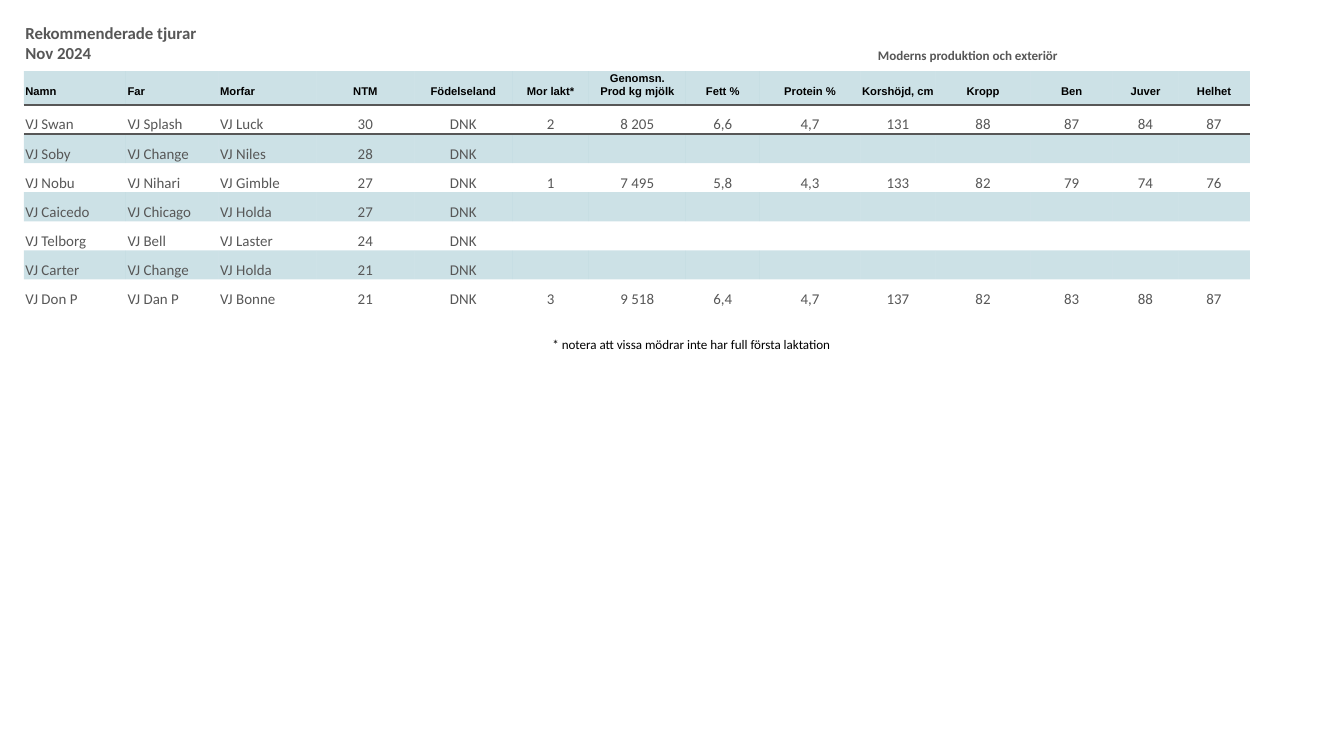
from dataclasses import dataclass

from lxml import etree
from pptx import Presentation
from pptx.dml.color import RGBColor
from pptx.enum.text import MSO_ANCHOR, PP_ALIGN
from pptx.oxml.ns import qn
from pptx.util import Cm, Pt

LEFT, MID = PP_ALIGN.LEFT, PP_ALIGN.CENTER
LOW = MSO_ANCHOR.BOTTOM

PLAIN = "{2D5ABB26-0587-4C30-8999-92F81FD0307C}"
WIDTHS = [1.93, 1.75, 1.85, 1.85, 1.85, 1.45, 1.83,
          1.4, 1.9, 1.42, 1.8, 1.55, 1.24, 1.35]
ROW = 0.55
HEADS = ["Namn", "Far", "Morfar", "NTM", "Födelseland", "Mor lakt*",
         "Genomsn.\vProd kg mjölk", "Fett %", "Protein %", "Korshöjd, cm",
         "Kropp", "Ben", "Juver", "Helhet"]
BULLS = [
    ["VJ Swan", "VJ Splash", "VJ Luck", "30", "DNK", "2", "8 205",
     "6,6", "4,7", "131", "88", "87", "84", "87"],
    ["VJ Soby", "VJ Change", "VJ Niles", "28", "DNK"],
    ["VJ Nobu", "VJ Nihari", "VJ Gimble", "27", "DNK", "1", "7 495",
     "5,8", "4,3", "133", "82", "79", "74", "76"],
    ["VJ Caicedo", "VJ Chicago", "VJ Holda", "27", "DNK"],
    ["VJ Telborg", "VJ Bell", "VJ Laster", "24", "DNK"],
    ["VJ Carter", "VJ Change", "VJ Holda", "21", "DNK"],
    ["VJ Don P", "VJ Dan P", "VJ Bonne", "21", "DNK", "3", "9 518",
     "6,4", "4,7", "137", "82", "83", "88", "87"],
]
TINTED = {1, 3, 5, 7}


@dataclass(frozen=True)
class Theme:
    grey: str = "575757"
    black: str = "000000"
    teal: str = "006B85"
    tint: int = 20
    rule: float = 1
    body: str = "Calibri"
    head: str = "Arial"
    title: float = 9
    group: float = 7
    label: float = 6
    data: float = 8
    note: float = 7


def put(item, values):
    for name, value in values.items():
        setattr(item, name, value)


class Page:
    """Hold the theme and the current slide, and draw tables on it."""

    def __init__(self, slide, theme):
        self.slide, self.theme = slide, theme

    def table(self, left, top, widths, heights):
        shape = self.slide.shapes.add_table(
            len(heights), len(widths), Cm(left), Cm(top),
            Cm(sum(widths)), Cm(sum(heights)))
        grid = shape.table
        put(grid, {"first_row": False, "horz_banding": False})
        grid._tbl.tblPr.find(qn("a:tableStyleId")).text = PLAIN
        for col, width in zip(grid.columns, widths):
            col.width = Cm(width)
        for row, height in zip(grid.rows, heights):
            row.height = Cm(height)
        return grid

    def cell(self, cell, text, size, font, color, bold=False, align=LEFT, foot=0.13):
        put(cell, {"vertical_anchor": LOW, "margin_left": Cm(0.03),
                   "margin_right": Cm(0.03), "margin_top": Cm(0.03),
                   "margin_bottom": Cm(foot)})
        cell.fill.background()
        cell.text_frame.text = text
        para = cell.text_frame.paragraphs[0]
        para.alignment = align
        for run in para.runs:
            put(run.font, {"size": Pt(size), "name": font, "bold": bold})
            run.font.color.rgb = RGBColor.from_string(color)
        units = str(int(size * 100))
        for gap in para._p.findall(qn("a:br")):
            etree.SubElement(gap, qn("a:rPr"), sz=units)
        if not text:
            etree.SubElement(para._p, qn("a:endParaRPr"), sz=units)

    def tint(self, cell):
        cell.fill.solid()
        cell.fill.fore_color.rgb = RGBColor.from_string(self.theme.teal)
        tone = cell._tc.tcPr.find(".//" + qn("a:srgbClr"))
        etree.SubElement(tone, qn("a:alpha"), val=str(self.theme.tint * 1000))

    def rule(self, cell, side):
        line = etree.Element(qn("a:" + side), w=str(Pt(self.theme.rule)))
        fill = etree.SubElement(line, qn("a:solidFill"))
        etree.SubElement(fill, qn("a:srgbClr"), val=self.theme.grey)
        cell._tc.tcPr.insert(0, line)


def main():
    deck = Presentation()
    put(deck, {"slide_width": Cm(25.4), "slide_height": Cm(14.29)})
    theme = Theme()
    page = Page(deck.slides.add_slide(deck.slide_layouts[6]), theme)

    grid = page.table(0.45, 0.41, WIDTHS, [0.92, 0.64] + [ROW] * len(BULLS))
    count = len(WIDTHS)
    tops = {0: "Rekommenderade tjurar Nov 2024", 7: "Moderns produktion och exteriör"}
    for col in range(count):
        page.cell(grid.cell(0, col), tops.get(col, ""),
                  theme.group if col else theme.title, theme.body, theme.grey,
                  True, MID if col else LEFT)
    for start, end in [(0, 1), (5, 6), (7, 13)]:
        grid.cell(0, start).merge(grid.cell(0, end))

    for row, texts in enumerate([HEADS] + BULLS, 1):
        if row == 1:
            look = {"size": theme.label, "font": theme.head,
                    "color": theme.black, "bold": True}
        else:
            look = {"size": theme.data, "font": theme.body,
                    "color": theme.grey, "foot": 0}
        for col in range(count):
            cell = grid.cell(row, col)
            text = texts[col] if col < len(texts) else ""
            page.cell(cell, text, align=LEFT if col < 3 else MID, **look)
            if row in TINTED:
                page.tint(cell)
            if row in (1, 2):
                page.rule(cell, "lnB" if row == 1 else "lnT")

    note = page.table(10.41, 6.25, [9.09], [ROW])
    page.cell(note.cell(0, 0), "* notera att vissa mödrar inte har full första laktation",
              theme.note, theme.body, theme.black)
    deck.save("out.pptx")


if __name__ == "__main__":
    main()
